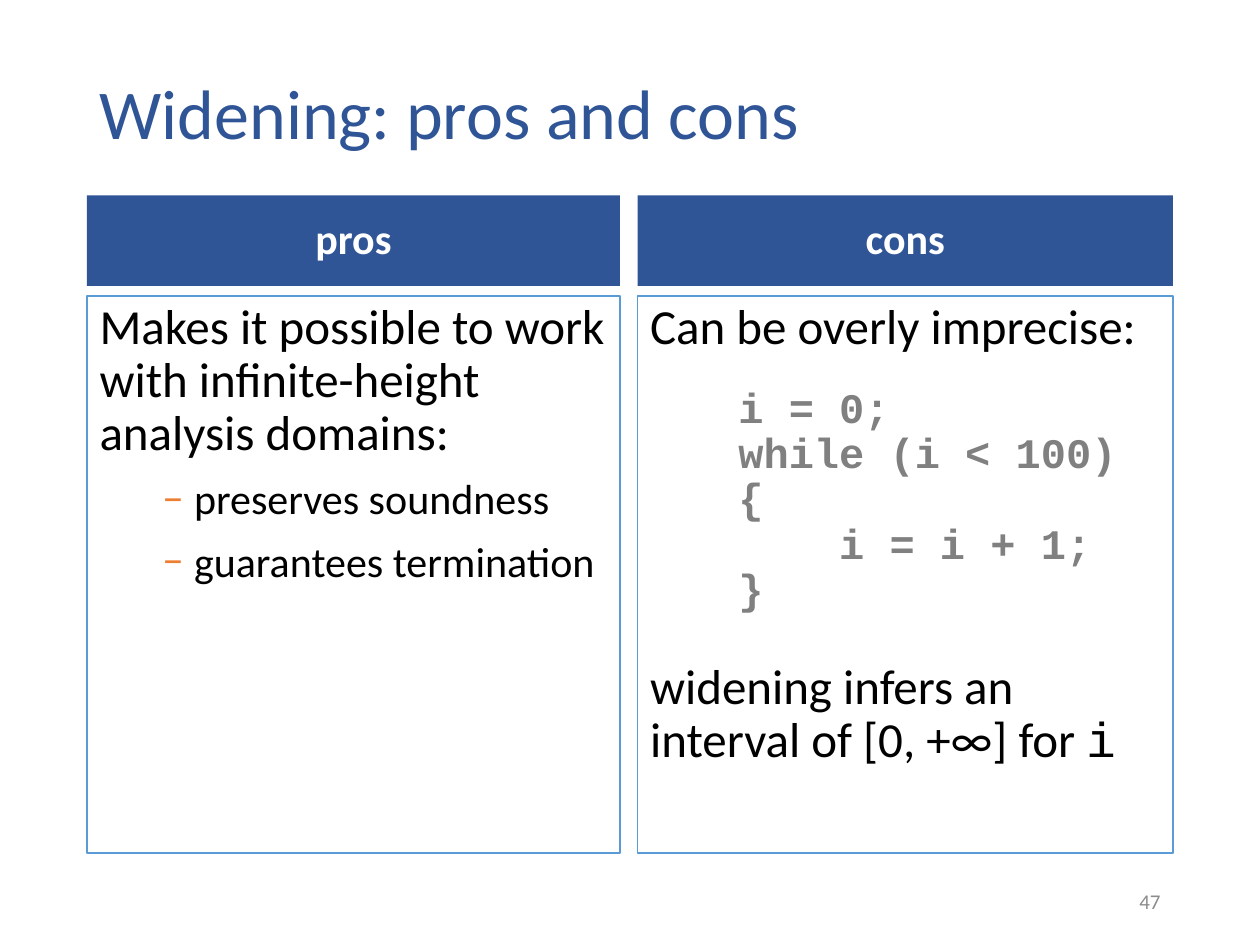
from lxml.etree import SubElement
from pptx import Presentation
from pptx.dml.color import RGBColor
from pptx.enum.text import MSO_ANCHOR as Anchor, MSO_AUTO_SIZE as AutoSize, PP_ALIGN as Align
from pptx.oxml.ns import qn
from pptx.util import Inches, Pt

COLORS = {
    "blue": "2F5597", "border": "5B9BD5", "dash": "ED7D31", "white": "FFFFFF",
    "text": "000000", "code": "808080", "number": "8C8C8C",
}
BODY, CODE = "Calibri", "Courier New"
COMPARISON_LAYOUT = 4
MARGIN, HEADER_TOP, HEADER_HEIGHT = 0.69, 1.55, 0.72
PANEL_TOP, PANEL_HEIGHT = 2.35, 4.42
CODE_INDENT, CODE_STEP = 0.7, 0.8  # one step is four characters wide


def rgb(name):
    return RGBColor.from_string(COLORS[name])


def place(shape, left, top, width, height, anchor=Anchor.TOP):
    shape.left, shape.top = Inches(left), Inches(top)
    shape.width, shape.height = Inches(width), Inches(height)
    frame = shape.text_frame
    frame.word_wrap = True
    frame.auto_size = AutoSize.NONE
    frame.vertical_anchor = anchor
    return frame


def add_run(paragraph, text, size=28, font=BODY, color="text", bold=False):
    run = paragraph.add_run()
    run.text = text
    run.font.size, run.font.name, run.font.bold = Pt(size), font, bold
    run.font.color.rgb = rgb(color)


def write(frame, text, align=Align.LEFT, level=0, margin=0, hanging=0, bullet=None,
          before=10, after=5, spacing=0.9, **run_format):
    """Add a paragraph, using the first one while it is still empty."""
    first = frame.paragraphs[0]
    paragraph = frame.add_paragraph() if first.runs else first
    paragraph.alignment, paragraph.level = align, level
    paragraph.line_spacing = spacing
    paragraph.space_before, paragraph.space_after = Pt(before), Pt(after)
    props = paragraph._p.get_or_add_pPr()
    props.set("marL", str(Inches(margin)))
    props.set("indent", str(-Inches(hanging)))
    if bullet:
        bullet_color = SubElement(props, qn("a:buClr"))
        SubElement(bullet_color, qn("a:srgbClr"), val=COLORS["dash"])
        SubElement(props, qn("a:buFont"), typeface=BODY)
        SubElement(props, qn("a:buChar"), char=bullet)
    else:
        SubElement(props, qn("a:buNone"))
    add_run(paragraph, text, **run_format)
    return paragraph


def add_title(title, text):
    frame = place(title, MARGIN, 0.4, 8.62, 1.05, Anchor.MIDDLE)
    write(frame, text, before=0, after=0, size=40, color="blue")


def add_column(header, panel, heading, left, width):
    """Place a filled heading above an outlined panel; return the panel's text."""
    header.fill.solid()
    header.fill.fore_color.rgb = rgb("blue")
    frame = place(header, left, HEADER_TOP, width, HEADER_HEIGHT, Anchor.MIDDLE)
    write(frame, heading, align=Align.CENTER, size=24, color="white", bold=True)
    panel.line.color.rgb = rgb("border")
    panel.line.width = Pt(0.75)
    return place(panel, left, PANEL_TOP, width, PANEL_HEIGHT)


def fill_pros(frame):
    write(frame, "Makes it possible to work with infinite-height analysis domains:")
    for benefit in ("preserves soundness", "guarantees termination"):
        write(frame, benefit, level=1, margin=0.75, hanging=0.25, bullet="−",
              before=5, size=24)


def fill_cons(frame):
    write(frame, "Can be overly imprecise:", after=18)
    # Code sample: text, depth, space after
    code = [("i = 0;", 0, 0), ("while (i < 100) {", 0, 0), ("i = i + 1;", 1, 0), ("}", 0, 18)]
    for line, depth, after in code:
        write(frame, line, level=1, margin=CODE_INDENT + depth * CODE_STEP,
              before=0, after=after, size=24, font=CODE, color="code", bold=True)
    conclusion = write(frame, "widening infers an interval of [0, +∞] for ")
    add_run(conclusion, "i", font=CODE)


def add_slide_number(slide, number):
    frame = place(slide.shapes.add_textbox(0, 0, 0, 0), 7.06, 6.95, 2.25, 0.4, Anchor.MIDDLE)
    write(frame, number, align=Align.RIGHT, before=0, after=0, spacing=1.0,
          size=12, color="number")


def main():
    deck = Presentation()
    deck.slide_width, deck.slide_height = Inches(10), Inches(7.5)
    slide = deck.slides.add_slide(deck.slide_layouts[COMPARISON_LAYOUT])
    title, pros_header, pros_panel, cons_header, cons_panel = slide.placeholders

    add_title(title, "Widening: pros and cons")
    fill_pros(add_column(pros_header, pros_panel, "pros", MARGIN, 4.23))
    fill_cons(add_column(cons_header, cons_panel, "cons", 5.06, 4.25))
    add_slide_number(slide, "47")
    deck.save("out.pptx")


if __name__ == "__main__":
    main()
